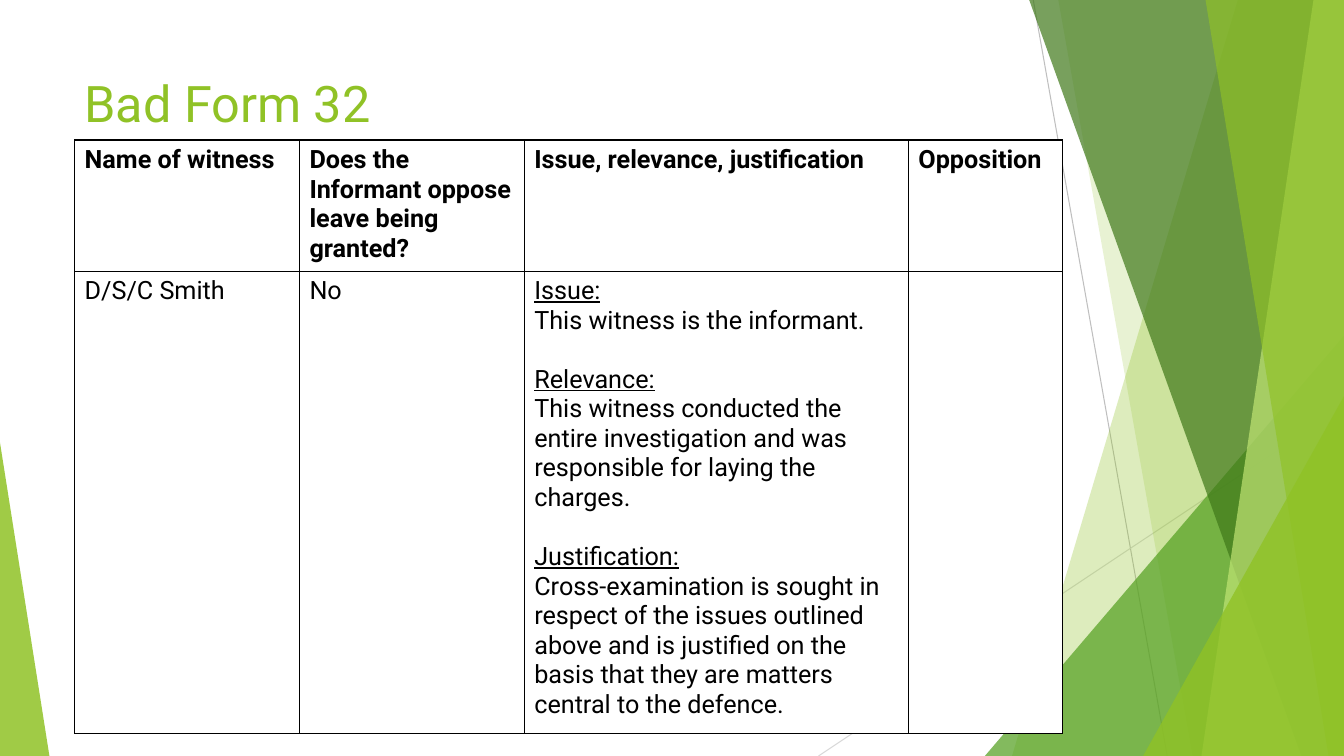
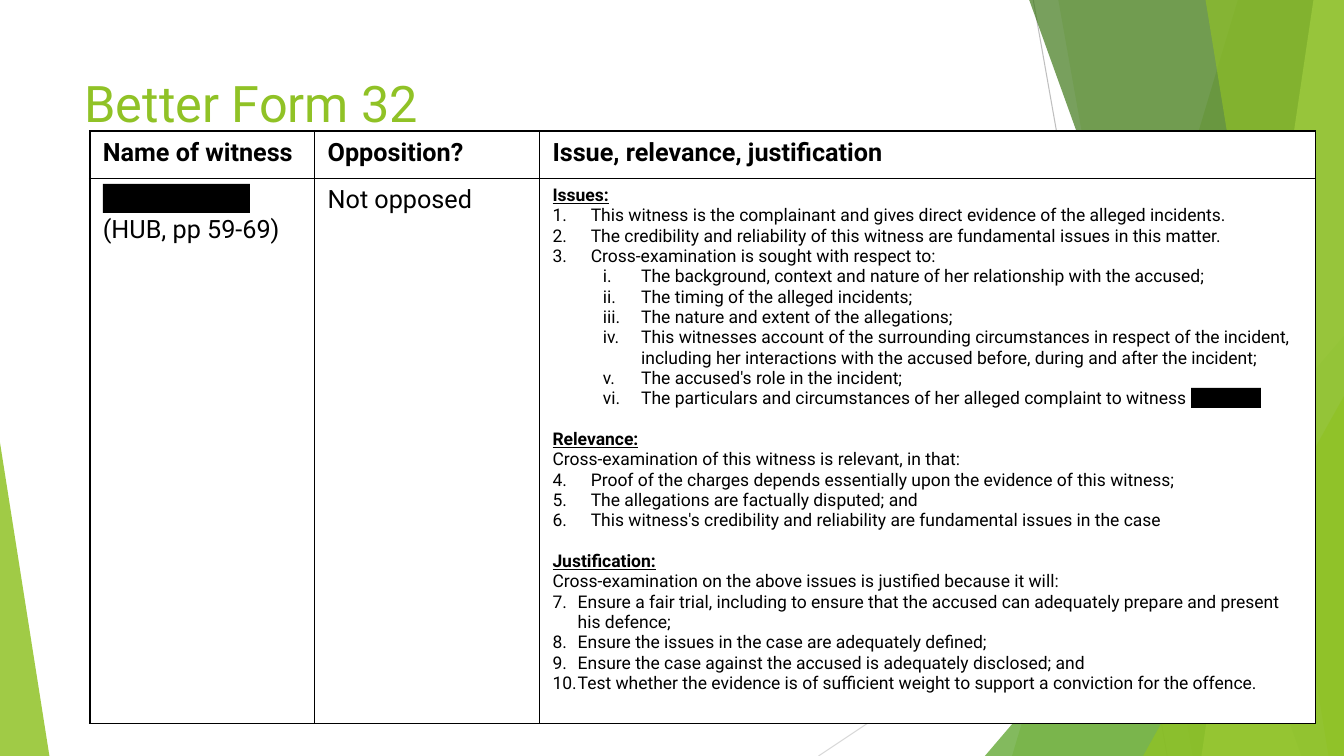
"""Build two slides that compare a bad and a better Form 32."""
from dataclasses import dataclass
from typing import Optional, Union

from lxml import etree
from pptx import Presentation
from pptx.dml.color import RGBColor
from pptx.enum.shapes import MSO_CONNECTOR, MSO_SHAPE
from pptx.enum.text import MSO_ANCHOR
from pptx.oxml.ns import qn
from pptx.util import Inches, Pt

STRAIGHT = MSO_CONNECTOR.STRAIGHT
RECT = MSO_SHAPE.RECTANGLE
TRIANGLE = MSO_SHAPE.ISOSCELES_TRIANGLE
TOP = MSO_ANCHOR.TOP
FONT = "Roboto"
LINE_HEIGHT = 1.17
W, H = Inches(13.333), Inches(7.5)
COLORS = {
    "lime": "90C226", "leaf": "54A021", "forest": "3F7819", "pale": "C0E474",
    "grey": "BFBFBF", "silver": "D9D9D9", "black": "000000", "white": "FFFFFF",
}


@dataclass
class Ray:
    """A thin line, with ends in percent of the slide."""
    x1: float
    y1: float
    x2: float
    y2: float
    color: str


@dataclass
class Facet:
    """A full-height panel bounded by a slanted left edge and the slide's right side."""
    top: float
    bottom: float
    color: str
    alpha: int


@dataclass
class Wedge:
    """A right triangle standing on the slide's bottom edge."""
    left: float
    top: float
    width: float
    apex: int
    color: str
    alpha: int


@dataclass
class Para:
    """A paragraph of a table cell."""
    text: str
    bold: bool = False
    underline: bool = False
    number: str = ""
    start: int = 1
    level: int = 0
    left: float = 0
    hang: float = 0
    gap: bool = False


@dataclass
class Cell:
    """The paragraphs of a table cell, their size and any lines kept free above."""
    paras: list[Para]
    size: float = 18
    skip: int = 0


@dataclass
class Grid:
    """A table placed in percent of the slide."""
    left: float
    top: float
    cols: list[float]
    rows: list[float]
    cells: list[list[Cell]]
    border: float
    inset: tuple[float, float]


@dataclass
class Page:
    """A slide's title, table and blacked-out boxes."""
    title: str
    grid: Grid
    redactions: list[tuple[float, float, float, float]]


DECOR: list[Union[Ray, Facet, Wedge]] = [
    Ray(76.88, 0, 86.85, 100, "grey"),
    Ray(100, 53.73, 60.9, 100, "silver"),
    Facet(92.1, 75.3, "lime", 30),
    Facet(78.75, 88.73, "lime", 20),
    Wedge(73.28, 44.4, 26.72, 1, "leaf", 72),
    Facet(76.58, 96.83, "forest", 70),
    Facet(97.73, 89.4, "pale", 70),
    Facet(89.7, 98.85, "lime", 65),
    Wedge(85.05, 52.4, 14.95, 1, "lime", 80),
    Wedge(0, 58.53, 3.68, 0, "lime", 85),
]


def heads(*texts: str) -> list[Cell]:
    """Return a row of bold header cells."""
    return [Cell([Para(t, bold=True)]) for t in texts]


def plain(*texts: str) -> Cell:
    """Return a cell of plain paragraphs."""
    return Cell([Para(t) for t in texts])


def numbered(start: int, indent: float, *texts: str) -> list[Para]:
    """Return paragraphs numbered with digits."""
    return [Para(t, number="arabicPeriod", start=start, left=indent, hang=indent) for t in texts]


def roman(*texts: str) -> list[Para]:
    """Return second-level paragraphs with roman numerals."""
    return [Para(t, number="romanLcPeriod", level=1, left=0.88, hang=0.38) for t in texts]


BAD_REASONS = Cell([
    Para("Issue:", underline=True),
    Para("This witness is the informant."),
    Para("Relevance:", underline=True, gap=True),
    Para("This witness conducted the entire investigation and was responsible for laying the charges."),
    Para("Justification:", underline=True, gap=True),
    Para("Cross-examination is sought in respect of the issues outlined above and is justified "
         "on the basis that they are matters central to the defence."),
])

BETTER_REASONS = Cell([
    Para("Issues:", True, True),
    *numbered(
        1, 0.38,
        "This witness is the complainant and gives direct evidence of the alleged incidents.",
        "The credibility and reliability of this witness are fundamental issues in this matter.",
        "Cross-examination is sought with respect to:"),
    *roman(
        "The background, context and nature of her relationship with the accused;",
        "The timing of the alleged incidents;",
        "The nature and extent of the allegations;",
        "This witnesses account of the surrounding circumstances in respect of the incident, "
        "including her interactions with the accused before, during and after the incident;",
        "The accused's role in the incident;",
        "The particulars and circumstances of her alleged complaint to witness"),
    Para("Relevance:", True, True, gap=True),
    Para("Cross-examination of this witness is relevant, in that:"),
    *numbered(
        4, 0.38,
        "Proof of the charges depends essentially upon the evidence of this witness;",
        "The allegations are factually disputed; and",
        "This witness's credibility and reliability are fundamental issues in the case"),
    Para("Justification:", True, True, gap=True),
    Para("Cross-examination on the above issues is justified because it will:"),
    *numbered(
        7, 0.25,
        "Ensure a fair trial, including to ensure that the accused can adequately prepare "
        "and present his defence;",
        "Ensure the issues in the case are adequately defined;",
        "Ensure the case against the accused is adequately disclosed; and",
        "Test whether the evidence is of sufficient weight to support a conviction for the offence."),
], size=12.5)

PAGES = [
    Page("Bad Form 32", Grid(
        5.55, 18.53, [16.73, 16.73, 28.58, 11.48], [16.93, 60.1],
        [heads("Name of witness", "Does the Informant oppose leave being granted?",
               "Issue, relevance, justification", "Opposition"),
         [plain("D/S/C Smith"), plain("No"), BAD_REASONS, plain()]],
        1, (0.1, 0.05)), []),
    Page("Better Form 32", Grid(
        6.68, 17.33, [16.73, 16.73, 57.75], [6.27, 72.1],
        [heads("Name of witness", "Opposition?", "Issue, relevance, justification"),
         [Cell([Para("(HUB, pp 59-69)")], skip=1), plain("Not opposed"), BETTER_REASONS]],
        1.34, (0.13, 0.07)),
        [(7.66, 24.34, 10.94, 3.84), (88.62, 51.32, 5.21, 2.65)]),
]


def x(share: float) -> int:
    """Turn a percentage of the slide's width into a length."""
    return round(W * share / 100)


def y(share: float) -> int:
    """Turn a percentage of the slide's height into a length."""
    return round(H * share / 100)


def rgb(name: str) -> RGBColor:
    """Look up a colour of the palette."""
    return RGBColor.from_string(COLORS[name])


def paint(sp, color: str, alpha: int = 100) -> None:
    """Give a shape a flat fill with no line or shadow."""
    sp.shadow.inherit = False
    sp.line.fill.background()
    sp.fill.solid()
    sp.fill.fore_color.rgb = rgb(color)
    if alpha < 100:
        clr = sp._element.spPr.find(qn("a:solidFill")).find(qn("a:srgbClr"))
        etree.SubElement(clr, qn("a:alpha"), val=str(alpha * 1000))


def add_decor(s) -> None:
    """Draw the lines and translucent facets shared by all slides."""
    for item in DECOR:
        if isinstance(item, Ray):
            line = s.shapes.add_connector(STRAIGHT, x(item.x1), y(item.y1), x(item.x2), y(item.y2))
            line.line.color.rgb = rgb(item.color)
            line.line.width = Pt(0.75)
            etree.SubElement(line._element.spPr, qn("a:effectLst"))
            continue
        if isinstance(item, Facet):
            outline = s.shapes.build_freeform(x(item.top), 0)
            outline.add_line_segments([(W, 0), (W, H), (x(item.bottom), H)], close=True)
            sp = outline.convert_to_shape()
        else:
            sp = s.shapes.add_shape(
                TRIANGLE, x(item.left), y(item.top), x(item.width), y(100 - item.top))
            sp.adjustments[0] = item.apex
        paint(sp, item.color, item.alpha)


def add_run(p, text: str, color: str, size: float, **extra: bool) -> None:
    """Add a formatted run to a paragraph."""
    r = p.add_run()
    r.text = text
    r.font.color.rgb = rgb(color)
    for name, value in {"name": FONT, "size": Pt(size), **extra}.items():
        setattr(r.font, name, value)


def add_title(s, text: str) -> None:
    """Write the slide's title."""
    tf = s.shapes.add_textbox(x(5.55), y(8.93), x(70.5), y(19.2)).text_frame
    tf.word_wrap = True
    tf.vertical_anchor = TOP
    add_run(tf.paragraphs[0], text, "lime", 36)


def add_para(p, para: Para, size: float) -> None:
    """Write one paragraph of a cell with its numbering."""
    add_run(p, para.text, "black", size, bold=para.bold, underline=para.underline)
    p.level = para.level
    if para.gap:
        p.space_before = Pt(round(size * LINE_HEIGHT, 2))
    if para.number:
        ppr = p._p.get_or_add_pPr()
        ppr.set("marL", str(Inches(para.left)))
        ppr.set("indent", str(-Inches(para.hang)))
        etree.SubElement(ppr, qn("a:buFont"), typeface=FONT)
        etree.SubElement(ppr, qn("a:buAutoNum"), type=para.number, startAt=str(para.start))


def add_borders(cell, width: float) -> None:
    """Draw black borders on all four sides of a cell."""
    tcpr = cell._tc.get_or_add_tcPr()
    for side in ("lnL", "lnR", "lnT", "lnB"):
        ln = etree.SubElement(tcpr, qn(f"a:{side}"), w=str(Pt(width)))
        fill = etree.SubElement(ln, qn("a:solidFill"))
        etree.SubElement(fill, qn("a:srgbClr"), val=COLORS["black"])


def fill_cell(cell, content: Cell, grid: Grid) -> None:
    """Format a table cell and write its paragraphs."""
    add_borders(cell, grid.border)
    cell.fill.solid()
    cell.fill.fore_color.rgb = rgb("white")
    side, edge = (Inches(v) for v in grid.inset)
    skipped = Pt(content.skip * content.size * LINE_HEIGHT)
    for name, value in {"margin_left": side, "margin_right": side, "margin_top": edge + skipped,
                        "margin_bottom": edge, "vertical_anchor": TOP}.items():
        setattr(cell, name, value)
    tf = cell.text_frame
    for i, para in enumerate(content.paras):
        add_para(tf.add_paragraph() if i else tf.paragraphs[0], para, content.size)


def add_grid(s, grid: Grid) -> None:
    """Add the table of witnesses."""
    table = s.shapes.add_table(
        len(grid.rows), len(grid.cols), x(grid.left), y(grid.top),
        x(sum(grid.cols)), y(sum(grid.rows))).table
    table.first_row = table.horz_banding = False
    for col, share in zip(table.columns, grid.cols):
        col.width = x(share)
    for row, share, contents in zip(table.rows, grid.rows, grid.cells):
        row.height = y(share)
        for cell, content in zip(row.cells, contents):
            fill_cell(cell, content, grid)


def add_page(prs, page: Page, layout: Optional[int] = 6) -> None:
    """Add one slide with its decor, title, table and redactions."""
    s = prs.slides.add_slide(prs.slide_layouts[layout])
    add_decor(s)
    add_title(s, page.title)
    add_grid(s, page.grid)
    for left, top, width, height in page.redactions:
        paint(s.shapes.add_shape(RECT, x(left), y(top), x(width), y(height)), "black")


def main() -> None:
    """Build and save the presentation."""
    prs = Presentation()
    prs.slide_width, prs.slide_height = W, H
    for page in PAGES:
        add_page(prs, page)
    prs.save("out.pptx")


if __name__ == "__main__":
    main()
